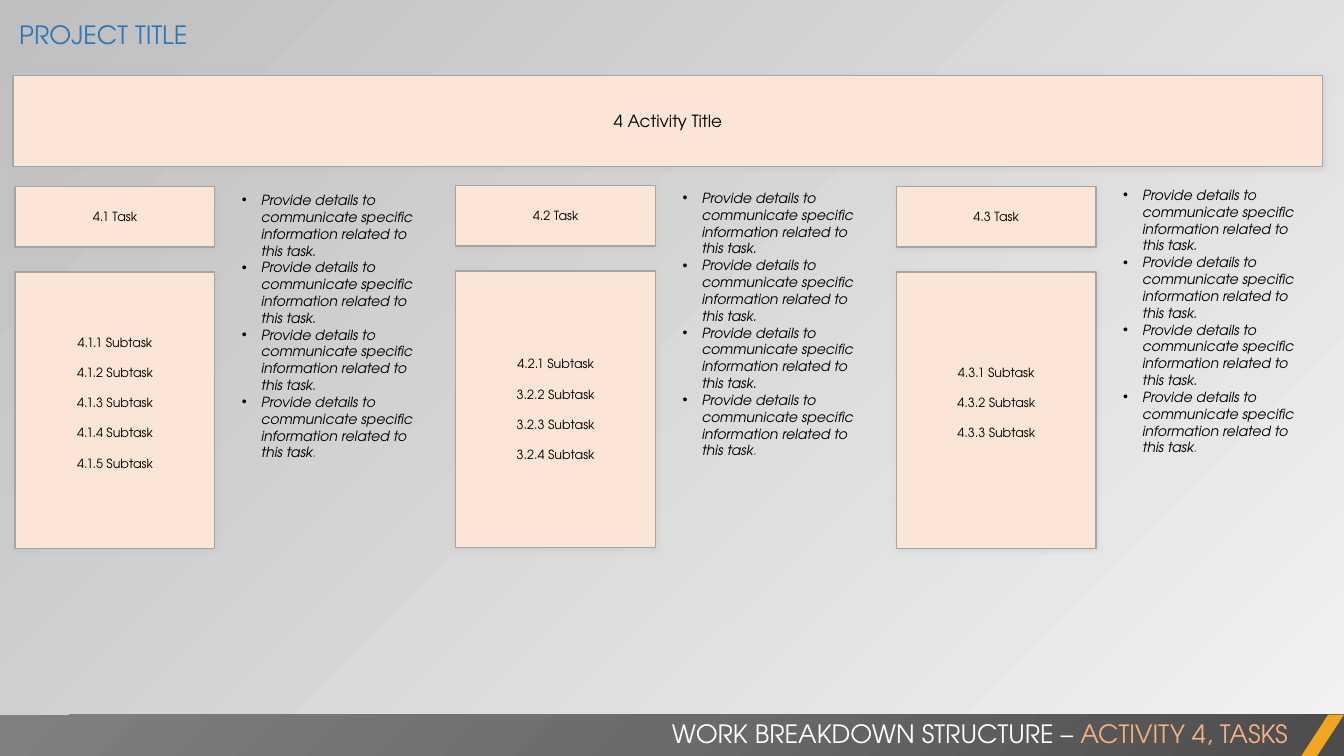
from pptx import Presentation
from pptx.dml.color import RGBColor as Rgb
from pptx.enum.shapes import MSO_SHAPE as Kind
from pptx.enum.text import MSO_ANCHOR as Anchor, MSO_AUTO_SIZE as Fit, PP_ALIGN as Align
from pptx.oxml import parse_xml
from pptx.oxml.ns import nsdecls, qn
from pptx.util import Inches, Pt

FONT = "TeX Gyre Adventor"
HUES = {
    "ink": "000000", "white": "FFFFFF", "blue": "2E75B6", "peach": "F4B183",
    "box": "FBE5D6", "edge": "A5A5A5", "shade": "BFBFBF", "light": "F2F2F2",
    "amber": "F0A622",
}
GREYS = {0: "4C4C4C", 50: "6B6B6B", 100: "808080"}
DETAIL = "Provide details to communicate specific information related to this task"
TASKS = [
    ("4.1 Task", ["4.1.1", "4.1.2", "4.1.3", "4.1.4", "4.1.5"], 1.85, 1.85, 0.2),
    ("4.2 Task", ["4.2.1", "3.2.2", "3.2.3", "3.2.4"], 1.84, 1.83, 0.05),
    ("4.3 Task", ["4.3.1", "4.3.2", "4.3.3"], 1.85, 1.8, 0.2),
]


def hue(name):
    """Return the named colour."""
    return Rgb.from_string(HUES[name])


def write(frame, paras, size=9, color="ink", align=Align.LEFT, anchor=Anchor.TOP,
          italic=False, bullet=False, after=0, base=0.05):
    """Fill a frame with paragraphs, each a list of (text, colour) runs."""
    frame.word_wrap = True
    frame.auto_size = Fit.NONE
    frame.vertical_anchor = anchor
    frame.margin_left = frame.margin_right = Inches(0.1)
    frame.margin_top, frame.margin_bottom = Inches(0.05), Inches(base)
    for i, runs in enumerate(paras):
        para = frame.add_paragraph() if i else frame.paragraphs[0]
        para.alignment = align
        para.line_spacing = 1.0
        para.space_before, para.space_after = Pt(0), Pt(after)
        if bullet:
            props = para._p.get_or_add_pPr()
            props.set("marL", str(Inches(0.19)))
            props.set("indent", str(Inches(-0.19)))
            props.append(parse_xml(f'<a:buFont {nsdecls("a")} typeface="Arial"/>'))
            props.append(parse_xml(f'<a:buChar {nsdecls("a")} char="•"/>'))
        for text, tint in runs:
            run = para.add_run()
            run.text = text
            font = run.font
            font.name, font.size = FONT, Pt(size)
            font.bold, font.italic = False, italic
            font.color.rgb = hue(tint or color)


class Board:
    """Holds the current slide and its style."""

    def __init__(self, deck):
        """Add a slide with a graded ground."""
        self.slide = deck.slides.add_slide(deck.slide_layouts[4])
        fill = self.slide.background.fill
        fill.gradient()
        fill.gradient_angle = 135
        for stop, name in zip(fill.gradient_stops, ("light", "shade")):
            stop.color.rgb = hue(name)

    def shape(self, kind, at, fill):
        """Add a plain filled shape."""
        item = self.slide.shapes.add_shape(kind, *map(Inches, at))
        item.shadow.inherit = False
        item.fill.solid()
        item.fill.fore_color.rgb = hue(fill)
        item.line.fill.background()
        return item

    def box(self, at, lines, **style):
        """Add an outlined box with a soft shadow and centred lines."""
        item = self.shape(Kind.RECTANGLE, at, "box")
        item.line.color.rgb = hue("edge")
        item.line.width = Pt(1)
        item._element.spPr.find(qn("a:effectLst")).append(parse_xml(
            f'<a:outerShdw {nsdecls("a")} blurRad="{Pt(4)}" dist="{Pt(1)}" dir="5400000">'
            f'<a:srgbClr val="{HUES["shade"]}"><a:alpha val="40000"/></a:srgbClr>'
            '</a:outerShdw>'))
        write(item.text_frame, [[(line, None)] for line in lines],
              align=Align.CENTER, anchor=Anchor.MIDDLE, **style)

    def band(self, at):
        """Add the footer band, shaded outward from its lower right corner."""
        item = self.shape(Kind.RECTANGLE, at, "ink")
        stops = "".join(f'<a:gs pos="{pos * 1000}"><a:srgbClr val="{grey}"/></a:gs>'
                        for pos, grey in GREYS.items())
        solid = item._element.spPr.find(qn("a:solidFill"))
        solid.getparent().replace(solid, parse_xml(
            f'<a:gradFill {nsdecls("a")} rotWithShape="1"><a:gsLst>{stops}</a:gsLst>'
            '<a:path path="circle"><a:fillToRect l="100000" t="100000"/></a:path>'
            '</a:gradFill>'))

    def label(self, at, paras, **style):
        """Add a free text box."""
        write(self.slide.shapes.add_textbox(*map(Inches, at)).text_frame, paras, **style)

    def holder(self, idx, at, paras, **style):
        """Move and fill a placeholder."""
        item = self.slide.placeholders[idx]
        item.left, item.top, item.width, item.height = map(Inches, at)
        write(item.text_frame, paras, **style)

    def drop(self, idx):
        """Remove an unused placeholder."""
        item = self.slide.placeholders[idx]._element
        item.getparent().remove(item)


def main():
    """Build the work breakdown slide."""
    deck = Presentation()
    deck.slide_width, deck.slide_height = Inches(13.33), Inches(7.5)
    board = Board(deck)
    board.holder(0, (0.09, 0.14, 10.11, 0.4), [[("PROJECT TITLE", None)]],
                 size=18, color="blue")
    board.box((0.13, 0.75, 12.99, 0.9), ["4 Activity Title"], size=12)

    notes = [[(DETAIL + ".", None)]] * 3 + [[(DETAIL, None), (".", "blue")]]
    for i, (task, codes, top, head, base) in enumerate(TASKS):
        left = 0.15 + 4.37 * i
        board.box((left, top, 1.98, 0.6), [task])
        board.box((left, top + 0.85, 1.98, 2.74), [f"{code} Subtask" for code in codes],
                  after=10.8, base=base)
        board.holder(i + 1, (left + 2.15, head, 2.06, 3), notes,
                     size=10, italic=True, bullet=True)
    board.drop(4)

    board.band((0, 7.09, 13.33, 0.42))
    slash = board.shape(Kind.PARALLELOGRAM, (12.9, 7.09, 0.43, 0.42), "amber")
    slash.adjustments[0] = 0.65
    board.label((5.25, 7.08, 7.62, 0.4),
                [[("WORK BREAKDOWN STRUCTURE – ", None), ("ACTIVITY 4, TASKS", "peach")]],
                size=18, color="white", align=Align.RIGHT)
    deck.save("out.pptx")


if __name__ == "__main__":
    main()
